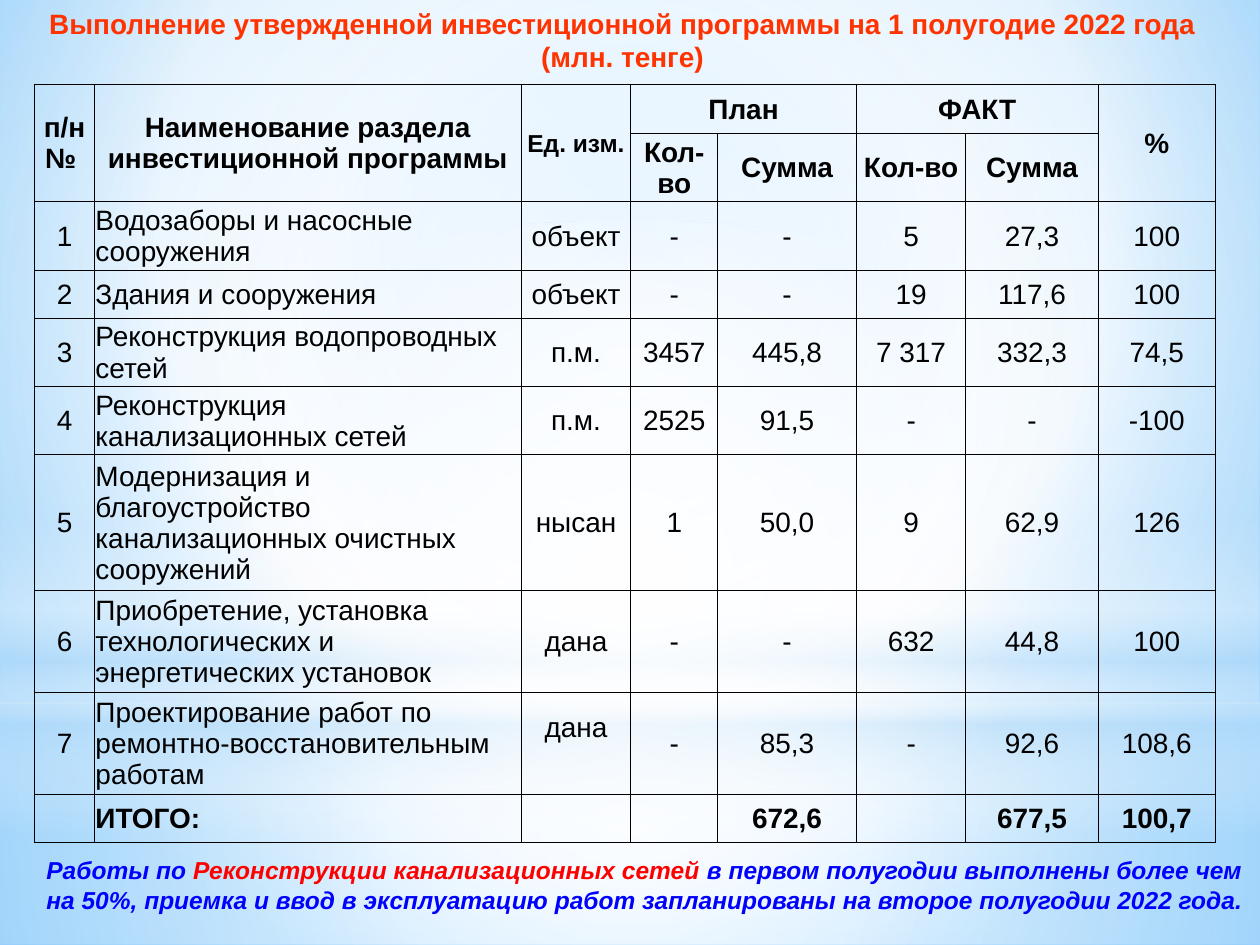
from lxml import etree
from pptx import Presentation
from pptx.dml.color import RGBColor
from pptx.enum import shapes, text
from pptx.oxml import ns
from pptx.util import Pt

CENTER, LEFT = text.PP_ALIGN.CENTER, text.PP_ALIGN.LEFT

COLUMNS = [34, 244, 62.6, 49.7, 79.2, 62.6, 75.6, 67]
ROW_HEIGHTS = [28, 38.9, 38.9, 27.4, 38.9, 38.9, 77, 57.7, 58.3, 27.4]
ROWS = [
    ["п/н\n№ ", "Наименование раздела инвестиционной программы", "Ед. изм.",
     "План", "", "ФАКТ", "", "%"],
    ["", "", "", "Кол-во", "Сумма", "Кол-во", "Сумма", ""],
    ["1", "Водозаборы и насосные сооружения", "объект", "-", "-", "5", "27,3", "100"],
    ["2", "Здания и сооружения", "объект", "-", "-", "19", "117,6", "100"],
    ["3", "Реконструкция водопроводных сетей", "п.м.", "3457", "445,8", "7 317", "332,3", "74,5"],
    ["4", "Реконструкция канализационных сетей", "п.м.", "2525", "91,5", "-", "-", "-100"],
    ["5", "Модернизация и благоустройство канализационных очистных сооружений",
     "нысан", "1", "50,0", "9", "62,9", "126"],
    ["6", "Приобретение, установка технологических и энергетических установок",
     "дана", "-", "-", "632", "44,8", "100"],
    ["7", "Проектирование работ по ремонтно-восстановительным работам",
     "дана", "-", "85,3", "-", "92,6", "108,6"],
    ["", "ИТОГО:", "", "", "672,6", "", "677,5", "100,7"],
]
HEADER_ROWS = 2
MERGES = [(0, 0, 1, 0), (0, 1, 1, 1), (0, 2, 1, 2), (0, 3, 0, 4), (0, 5, 0, 6), (0, 7, 1, 7)]


def color(value):
    return RGBColor.from_string(value)


def add_xml(parent, tag, **attributes):
    return etree.SubElement(parent, ns.qn(tag), {k: str(v) for k, v in attributes.items()})


def replace_with_gradient(owner, stops, center=None):
    """Swap the solid fill in owner for a gradient: circular around center, else top to bottom.

    Stops are (position %, colour, opacity %); center is left, top, right, bottom in %.
    """
    solid = owner.find(ns.qn("a:solidFill"))
    gradient = etree.Element(ns.qn("a:gradFill"), rotWithShape="1")
    stop_list = add_xml(gradient, "a:gsLst")
    for position, value, opacity in stops:
        stop = add_xml(stop_list, "a:gs", pos=position * 1000)
        rgb = add_xml(stop, "a:srgbClr", val=value)
        if opacity < 100:
            add_xml(rgb, "a:alpha", val=opacity * 1000)
    if center:
        circle = add_xml(gradient, "a:path", path="circle")
        sides = {side: percent * 1000 for side, percent in zip("ltrb", center)}
        add_xml(circle, "a:fillToRect", **sides)
    else:
        add_xml(gradient, "a:lin", ang=90 * 60000, scaled=0)
    owner.replace(solid, gradient)


class SlideBuilder:
    font = "Arial"
    size = 16
    ink = "000000"
    border_width = 0.5

    def __init__(self, slide):
        self.slide = slide

    def background(self, stops, center):
        self.slide.background.fill.solid()
        replace_with_gradient(self.slide.element.find(".//" + ns.qn("p:bgPr")), stops, center)

    def glow(self, kind, top, height, stops, center=None):
        """Add a full-width, outline-free shape with a translucent gradient."""
        shape = self.slide.shapes.add_shape(kind, 0, Pt(top), Pt(720), Pt(height))
        shape.shadow.inherit = False
        shape.line.fill.background()
        shape.fill.solid()
        replace_with_gradient(shape.element.spPr, stops, center)

    def style(self, font, size, value, bold=False, italic=False):
        font.name, font.size = self.font, Pt(size)
        font.bold, font.italic = bold, italic
        font.color.rgb = color(value)

    def text(self, box, runs, size, align=LEFT, italic=False):
        """Add a bold paragraph made of (wording, colour) runs."""
        frame = self.slide.shapes.add_textbox(*map(Pt, box)).text_frame
        frame.word_wrap = True
        paragraph = frame.paragraphs[0]
        paragraph.alignment = align
        for wording, value in runs:
            run = paragraph.add_run()
            run.text = wording
            self.style(run.font, size, value, True, italic)

    def borders(self, cell):
        properties = cell._tc.get_or_add_tcPr()
        for index, side in enumerate("LRTB"):
            line = etree.Element(ns.qn(f"a:ln{side}"), w=str(Pt(self.border_width)))
            add_xml(add_xml(line, "a:solidFill"), "a:srgbClr", val=self.ink)
            properties.insert(index, line)

    def cell(self, cell, wording, size, align, bold):
        cell.fill.background()
        self.borders(cell)
        cell.vertical_anchor = text.MSO_ANCHOR.MIDDLE
        cell.margin_left = cell.margin_right = cell.margin_top = Pt(0.7)
        cell.margin_bottom = 0
        cell.text_frame.text = wording
        for paragraph in cell.text_frame.paragraphs:
            paragraph.alignment = align
            self.style(paragraph.font, size, self.ink, bold)
            for run in paragraph.runs:
                self.style(run.font, size, self.ink, bold)

    def table(self, left, top):
        frame = self.slide.shapes.add_table(
            len(ROWS), len(COLUMNS), Pt(left), Pt(top), Pt(sum(COLUMNS)), Pt(sum(ROW_HEIGHTS)))
        table = frame.table
        table.first_row = table.horz_banding = False
        for column, width in zip(table.columns, COLUMNS):
            column.width = Pt(width)
        for row, height in zip(table.rows, ROW_HEIGHTS):
            row.height = Pt(height)
        for i, row in enumerate(ROWS):
            header = i < HEADER_ROWS
            for j, wording in enumerate(row):
                align = LEFT if j == 1 and not header else CENTER
                size = 14 if header and j == 2 else self.size
                self.cell(table.cell(i, j), wording, size, align, header or i == len(ROWS) - 1)
        for top_row, first, bottom_row, last in MERGES:
            table.cell(top_row, first).merge(table.cell(bottom_row, last))
        return table


def main():
    presentation = Presentation()
    presentation.slide_width, presentation.slide_height = Pt(720), Pt(540)
    builder = SlideBuilder(presentation.slides.add_slide(presentation.slide_layouts[6]))

    white, sky, middle = "FFFFFF", "B4DCFA", (50, 50, 50, 50)
    rectangle, oval = shapes.MSO_SHAPE.RECTANGLE, shapes.MSO_SHAPE.OVAL
    builder.background([(0, "9ED5FF", 100), (60, white, 100), (100, "5BB9FF", 100)],
                       (20, 10, 20, 60))
    builder.glow(rectangle, 401.75, 138.25,
                 [(0, white, 91), (37, white, 76), (100, sky, 79)], middle)
    builder.glow(rectangle, 0, 401.75,
                 [(0, white, 89), (48, white, 62), (100, sky, 79)], middle)
    builder.glow(rectangle, 296.6, 180,
                 [(0, white, 0), (29, white, 30), (45, sky, 40),
                  (55, white, 26), (65, sky, 60), (100, white, 0)])
    builder.glow(oval, 126, 401.75, [(0, white, 100), (56, white, 0)], middle)

    builder.text((0, 0, 711.4, 46), [
        ("Выполнение утвержденной инвестиционной программы на 1 полугодие 2022 года "
         "(млн. тенге)", "FF3300")], 16, CENTER)
    table = builder.table(19.9, 48.2)
    table.cell(8, 2).margin_bottom = Pt(18)
    builder.text((19.4, 485.3, 711.4, 41), [
        ("Работы по ", "0000FF"),
        ("Реконструкции канализационных сетей ", "FF0000"),
        ("в первом полугодии выполнены более чем на 50%, приемка и ввод в эксплуатацию "
         "работ запланированы на второе полугодии 2022 года.", "0000FF")], 14, italic=True)
    presentation.save("out.pptx")


if __name__ == "__main__":
    main()
